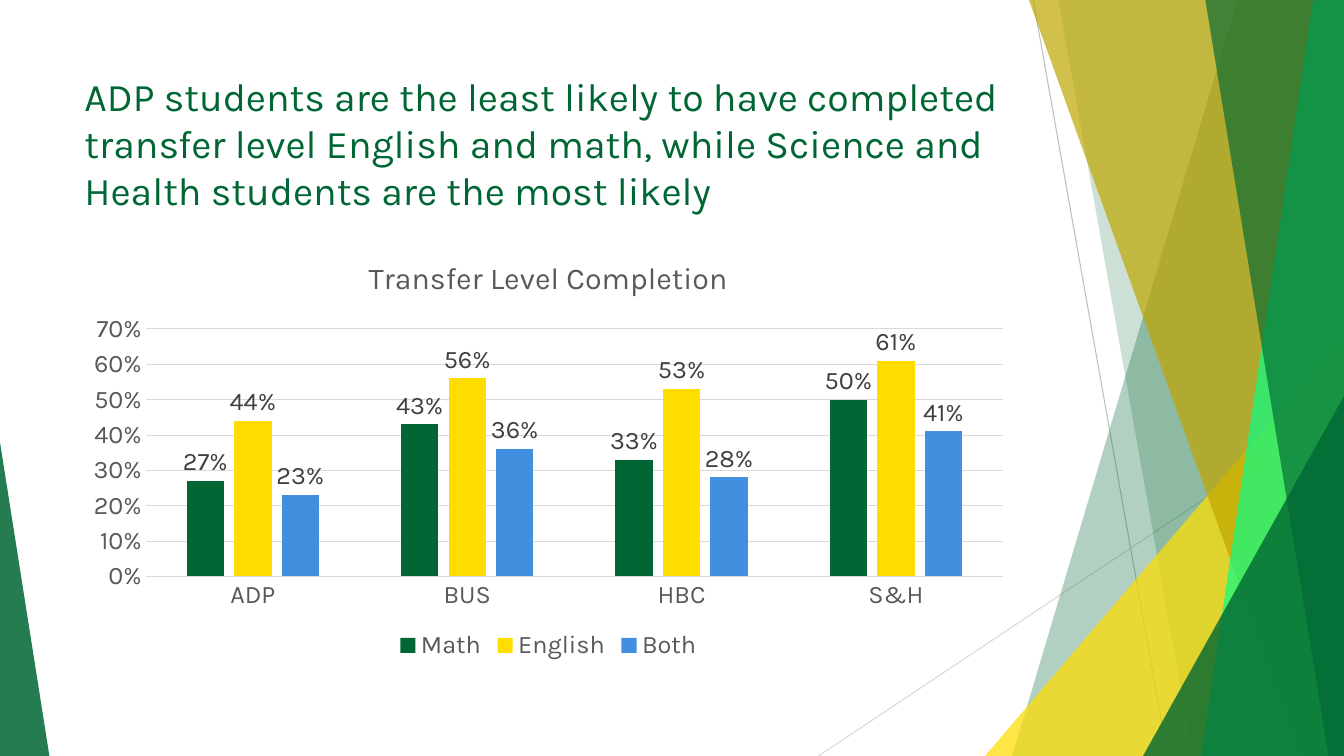
from dataclasses import dataclass

from pptx import Presentation
from pptx.chart.data import CategoryChartData as ChartData
from pptx.dml.color import RGBColor as Rgb
from pptx.enum.chart import XL_CHART_TYPE as Kind
from pptx.enum.chart import XL_LABEL_POSITION as Spot
from pptx.enum.chart import XL_LEGEND_POSITION as Side
from pptx.enum.chart import XL_TICK_MARK as Tick
from pptx.enum.shapes import MSO_CONNECTOR as Link
from pptx.enum.shapes import MSO_SHAPE as Form
from pptx.oxml.ns import qn
from pptx.oxml.xmlchemy import OxmlElement as Node
from pptx.util import Pt


@dataclass(frozen=True)
class Theme:
    face: str = "Karla"
    green: str = "006633"
    gold: str = "FFDD00"
    blue: str = "418FDE"
    ochre: str = "BFA600"
    mint: str = "0AFF85"
    rule: str = "BFBFBF"
    grid: str = "D9D9D9"
    gray: str = "595959"
    dark: str = "404040"
    head: float = 28
    sub: float = 21.6
    body: float = 18
    hair: float = 0.75


THEME = Theme()
WIDE, HIGH = 960, 540


def put(item, **values):
    for name, value in values.items():
        setattr(item, name, value)


def style(font, size, color):
    put(font, name=THEME.face, size=Pt(size), bold=False)
    font.color.rgb = Rgb.from_string(color)


def stroke(line, color):
    line.width = Pt(THEME.hair)
    line.color.rgb = Rgb.from_string(color)


def paint(shape, color, alpha):
    shape.shadow.inherit = False
    shape.fill.solid()
    shape.fill.fore_color.rgb = Rgb.from_string(color)
    shape.line.fill.background()
    tone = shape.element.spPr.find(qn("a:solidFill"))[0]
    clear = Node("a:alpha")
    clear.set("val", str(alpha * 1000))
    tone.append(clear)


def add_line(slide, start, end, color):
    line = slide.shapes.add_connector(Link.STRAIGHT, *map(Pt, start + end))
    stroke(line.line, color)
    line.element.spPr.append(Node("a:effectLst"))


def add_panel(slide, top, foot, color, alpha):
    form = slide.shapes.build_freeform(Pt(top), 0, scale=1.0)
    corners = [(WIDE, 0), (WIDE, HIGH), (foot, HIGH)]
    form.add_line_segments([(Pt(x), Pt(y)) for x, y in corners], close=True)
    paint(form.convert_to_shape(), color, alpha)


def add_wedge(slide, left, top, width, peak, color, alpha):
    box = map(Pt, (left, top, width, HIGH - top))
    wedge = slide.shapes.add_shape(Form.ISOSCELES_TRIANGLE, *box)
    wedge.adjustments[0] = peak
    paint(wedge, color, alpha)


def add_title(slide, text):
    box = slide.shapes.add_textbox(*map(Pt, (53.3, 48.2, 676.8, 103.7)))
    box.text_frame.word_wrap = True
    run = box.text_frame.paragraphs[0].add_run()
    run.text = text
    style(run.font, THEME.head, THEME.green)


def add_bars(slide, title, groups, series):
    data = ChartData(number_format="0%")
    data.categories = groups
    for name, color, values in series:
        data.add_series(name, values)
    box = map(Pt, (53.3, 169.9, 676.8, 305.3))
    chart = slide.shapes.add_chart(Kind.COLUMN_CLUSTERED, *box, data).chart
    style(chart.font, THEME.body, THEME.gray)

    chart.has_title = True
    run = chart.chart_title.text_frame.paragraphs[0].add_run()
    run.text = title
    style(run.font, THEME.sub, THEME.gray)

    chart.has_legend = True
    put(chart.legend, position=Side.BOTTOM, include_in_layout=False)
    style(chart.legend.font, THEME.body, THEME.gray)

    for axis in (chart.category_axis, chart.value_axis):
        put(axis, major_tick_mark=Tick.NONE, minor_tick_mark=Tick.NONE)
        style(axis.tick_labels.font, THEME.body, THEME.gray)
    stroke(chart.category_axis.format.line, THEME.grid)
    scale = chart.value_axis
    put(scale, minimum_scale=0, maximum_scale=0.7, major_unit=0.1)
    put(scale.tick_labels, number_format="0%", number_format_is_linked=False)
    scale.format.line.fill.background()
    stroke(scale.major_gridlines.format.line, THEME.grid)

    plot = chart.plots[0]
    put(plot, gap_width=219, overlap=-27, vary_by_categories=False)
    for bars, (name, color, values) in zip(plot.series, series):
        bars.format.fill.solid()
        bars.format.fill.fore_color.rgb = Rgb.from_string(color)
        tags = bars.data_labels
        put(tags, show_value=True, position=Spot.OUTSIDE_END,
            number_format="0%", number_format_is_linked=False)
        style(tags.font, THEME.body, THEME.dark)


def add_decor(slide):
    add_line(slide, (738, 0), (834, HIGH), THEME.rule)
    add_line(slide, (WIDE, 290), (584.6, HIGH), THEME.grid)
    add_panel(slide, 884, 723, THEME.green, 30)
    add_panel(slide, 756, 852, THEME.green, 20)
    add_wedge(slide, 703.5, 240, 256.5, 1, THEME.gold, 72)
    add_panel(slide, 735, 929.5, THEME.ochre, 70)
    add_panel(slide, 938, 858, THEME.mint, 70)
    add_panel(slide, 861, 949, THEME.green, 65)
    add_wedge(slide, 816.5, 283, 143.5, 1, THEME.green, 80)
    add_wedge(slide, 0, 316, 35.3, 0, THEME.green, 85)


def main():
    deck = Presentation()
    put(deck, slide_width=Pt(WIDE), slide_height=Pt(HIGH))
    slide = deck.slides.add_slide(deck.slide_layouts[6])
    add_decor(slide)
    add_title(slide, "ADP students are the least likely to have completed "
              "transfer level English and math, while Science and "
              "Health students are the most likely")
    add_bars(slide, "Transfer Level Completion", ["ADP", "BUS", "HBC", "S&H"], [
        ("Math", THEME.green, (0.27, 0.43, 0.33, 0.5)),
        ("English", THEME.gold, (0.44, 0.56, 0.53, 0.61)),
        ("Both", THEME.blue, (0.23, 0.36, 0.28, 0.41)),
    ])
    deck.save("out.pptx")


if __name__ == "__main__":
    main()
